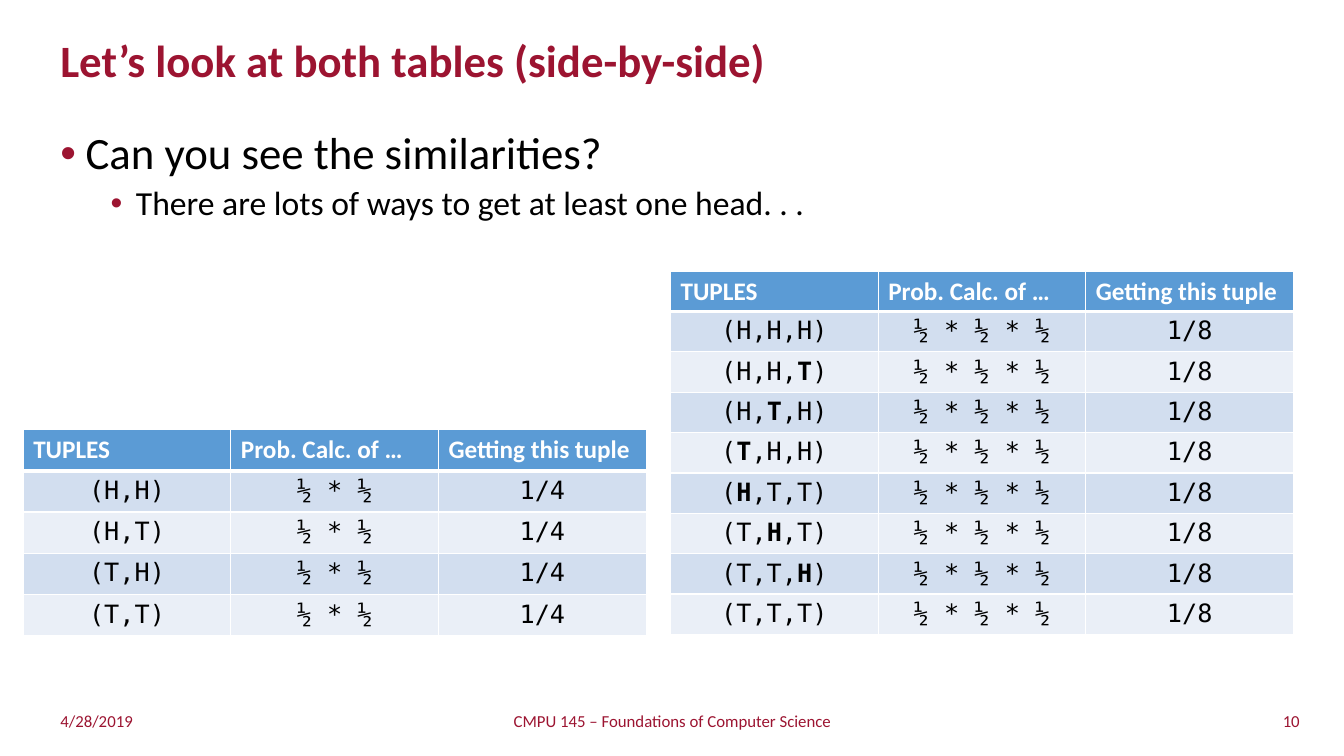
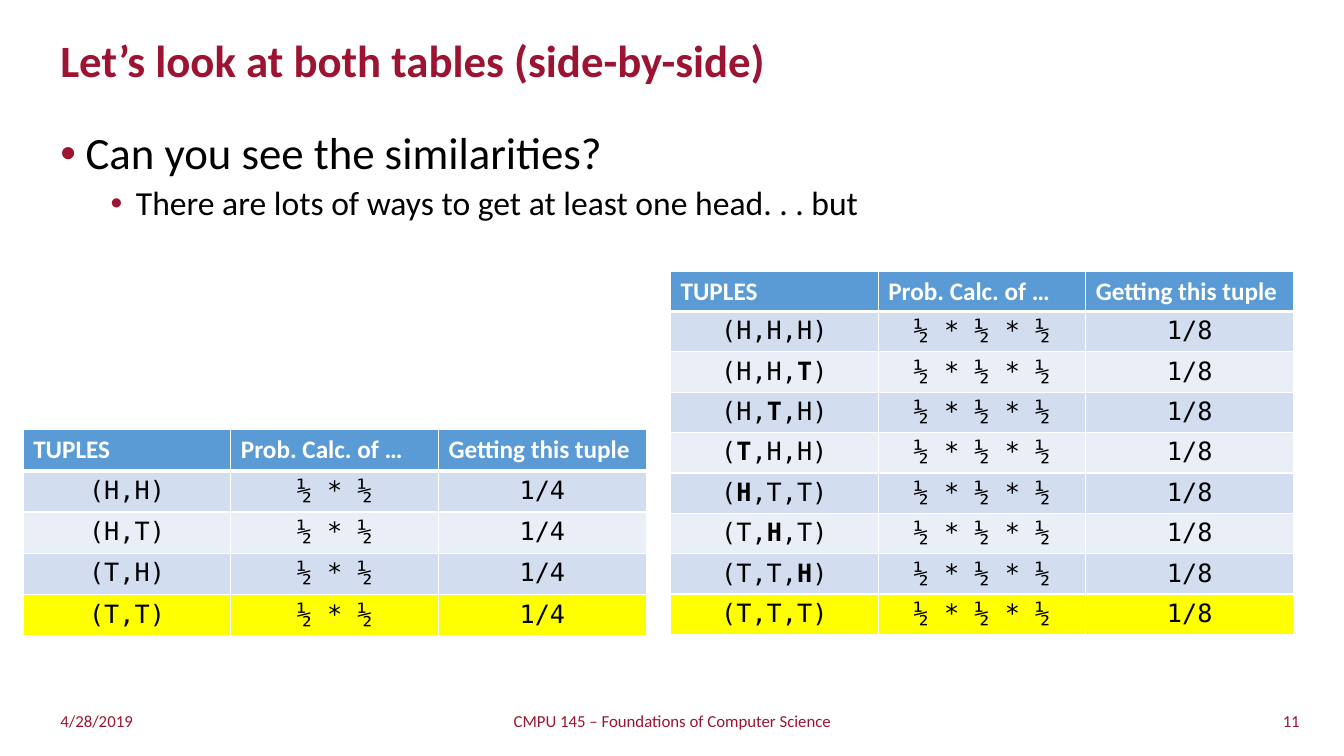
from dataclasses import dataclass

from lxml import etree
from pptx import Presentation
from pptx.dml.color import RGBColor
from pptx.enum import text
from pptx.oxml import ns
from pptx.util import Inches, Pt

LEFT, CENTER, RIGHT = text.PP_ALIGN.LEFT, text.PP_ALIGN.CENTER, text.PP_ALIGN.RIGHT


@dataclass(frozen=True)
class Theme:
    crimson: str = "9C1431"
    ink: str = "000000"
    white: str = "FFFFFF"
    header: str = "5B9BD5"
    bands: tuple = ("D2DEEF", "EAEFF7")
    highlight: str = "FFFF00"
    body_font: str = "Calibri"
    mono_font: str = "DejaVu Sans Mono"
    title_size: int = 32
    body_sizes: tuple = (32, 24)
    table_size: int = 18
    footer_size: int = 12


THEME = Theme()
TITLE_BOX = (0.5, 0.25, 11.45, 0.75)
BODY_BOX = (0.5, 1.25, 12.33, 1.37)
FOOTER_BOXES = ((0.5, 6.95, 3.76, 0.4), (4.42, 6.95, 4.5, 0.4), (9.23, 6.95, 3.76, 0.4))
TRIPLES_BOX = (6.65, 2.69, 6.18, 3.6)
PAIRS_BOX = (0.23, 4.26, 6.18, 2.03)
TRIPLES_ROW, PAIRS_ROW = 0.36, 0.41

TITLE = "Let’s look at both tables (side-by-side)"
QUESTION = "Can you see the similarities?"
DATE = "4/28/2019"
COURSE = "CMPU 145 – Foundations of Computer Science"
HEADINGS = ("TUPLES", "Prob. Calc. of …", "Getting this tuple")
TRIPLES = ("HHH", "HHT", "HTH", "THH", "HTT", "THT", "TTH", "TTT")
PAIRS = ("HH", "HT", "TH", "TT")


def set_font(font, size, color, name=THEME.body_font, bold=False):
    font.size, font.name, font.bold = Pt(size), name, bold
    font.color.rgb = RGBColor.from_string(color)


def add_text_frame(slide, box, anchor=text.MSO_ANCHOR.MIDDLE):
    frame = slide.shapes.add_textbox(*map(Inches, box)).text_frame
    frame.word_wrap = True
    frame.vertical_anchor = anchor
    return frame


def add_bullet(paragraph, indent):
    """Hang a crimson bullet a quarter inch left of the indent."""
    properties = paragraph._p.get_or_add_pPr()
    properties.set("marL", str(Inches(indent)))
    properties.set("indent", str(Inches(-0.25)))
    color = etree.SubElement(properties, ns.qn("a:buClr"))
    etree.SubElement(color, ns.qn("a:srgbClr"), val=THEME.crimson)
    etree.SubElement(properties, ns.qn("a:buFont"), typeface="Arial")
    etree.SubElement(properties, ns.qn("a:buChar"), char="•")


def add_title(slide, box):
    title = add_text_frame(slide, box).paragraphs[0]
    title.text = TITLE
    title.line_spacing = 0.9
    set_font(title.font, THEME.title_size, THEME.crimson, bold=True)


def add_body(slide, box, remark):
    frame = add_text_frame(slide, box, text.MSO_ANCHOR.TOP)
    for level, line in enumerate((QUESTION, remark)):
        paragraph = frame.add_paragraph() if level else frame.paragraphs[0]
        paragraph.text = line
        paragraph.level = level
        paragraph.line_spacing = 0.9
        if level:
            paragraph.space_before = Pt(5)
        add_bullet(paragraph, 0.25 + 0.5 * level)
        set_font(paragraph.font, THEME.body_sizes[level], THEME.ink)


def add_footer(slide, boxes, number):
    labels = (DATE, COURSE, str(number))
    for box, label, alignment in zip(boxes, labels, (LEFT, CENTER, RIGHT)):
        paragraph = add_text_frame(slide, box).paragraphs[0]
        paragraph.text = label
        paragraph.alignment = alignment
        set_font(paragraph.font, THEME.footer_size, THEME.crimson)


def style_cell(cell, fill, bottom_width=1):
    """Draw white borders, then fill the cell."""
    properties = cell._tc.get_or_add_tcPr()
    for side, width in (("L", 1), ("R", 1), ("T", 1), ("B", bottom_width)):
        line = etree.SubElement(properties, ns.qn(f"a:ln{side}"), w=str(Pt(width)))
        solid = etree.SubElement(line, ns.qn("a:solidFill"))
        etree.SubElement(solid, ns.qn("a:srgbClr"), val=THEME.white)
    cell.fill.solid()
    cell.fill.fore_color.rgb = RGBColor.from_string(fill)


def write_tuple(paragraph, faces):
    """Write the faces as a tuple, with the odd one out of three in bold."""
    odd = next((i for i, face in enumerate(faces)
                if len(faces) == 3 and faces.count(face) == 1), None)
    label = f"({','.join(faces)})"
    if odd is None:
        paragraph.text = label
        return
    start = 1 + 2 * odd
    for i, part in enumerate((label[:start], label[start], label[start + 1:])):
        run = paragraph.add_run()
        run.text = part
        run.font.bold = i == 1


def add_probability_table(slide, box, row_height, tuples, highlight_last):
    frame = slide.shapes.add_table(len(tuples) + 1, len(HEADINGS), *map(Inches, box))
    table = frame.table
    for row in table.rows:
        row.height = Inches(row_height)
    frame.height = Inches(box[3])

    for column, heading in enumerate(HEADINGS):
        cell = table.cell(0, column)
        style_cell(cell, THEME.header, bottom_width=3)
        cell.text = heading
        set_font(cell.text_frame.paragraphs[0].font, THEME.table_size, THEME.white, bold=True)

    for index, faces in enumerate(tuples):
        last = index == len(tuples) - 1
        fill = THEME.highlight if highlight_last and last else THEME.bands[index % 2]
        calculation = " * ".join("½" * len(faces))
        for column, value in enumerate((faces, calculation, f"1/{2 ** len(faces)}")):
            cell = table.cell(index + 1, column)
            style_cell(cell, fill)
            paragraph = cell.text_frame.paragraphs[0]
            paragraph.alignment = CENTER
            if column == 0:
                write_tuple(paragraph, value)
            else:
                paragraph.text = value
            set_font(paragraph.font, THEME.table_size, THEME.ink, THEME.mono_font)


def add_comparison_slide(deck, number, remark, highlight_last):
    slide = deck.slides.add_slide(deck.slide_layouts[6])
    add_title(slide, TITLE_BOX)
    add_body(slide, BODY_BOX, remark)
    add_footer(slide, FOOTER_BOXES, number)
    add_probability_table(slide, TRIPLES_BOX, TRIPLES_ROW, TRIPLES, highlight_last)
    add_probability_table(slide, PAIRS_BOX, PAIRS_ROW, PAIRS, highlight_last)


def main():
    deck = Presentation()
    deck.slide_width, deck.slide_height = Inches(13.33), Inches(7.5)
    remark = "There are lots of ways to get at least one head. . ."
    add_comparison_slide(deck, 10, remark, highlight_last=False)
    add_comparison_slide(deck, 11, f"{remark} but", highlight_last=True)
    deck.save("out.pptx")


if __name__ == "__main__":
    main()
